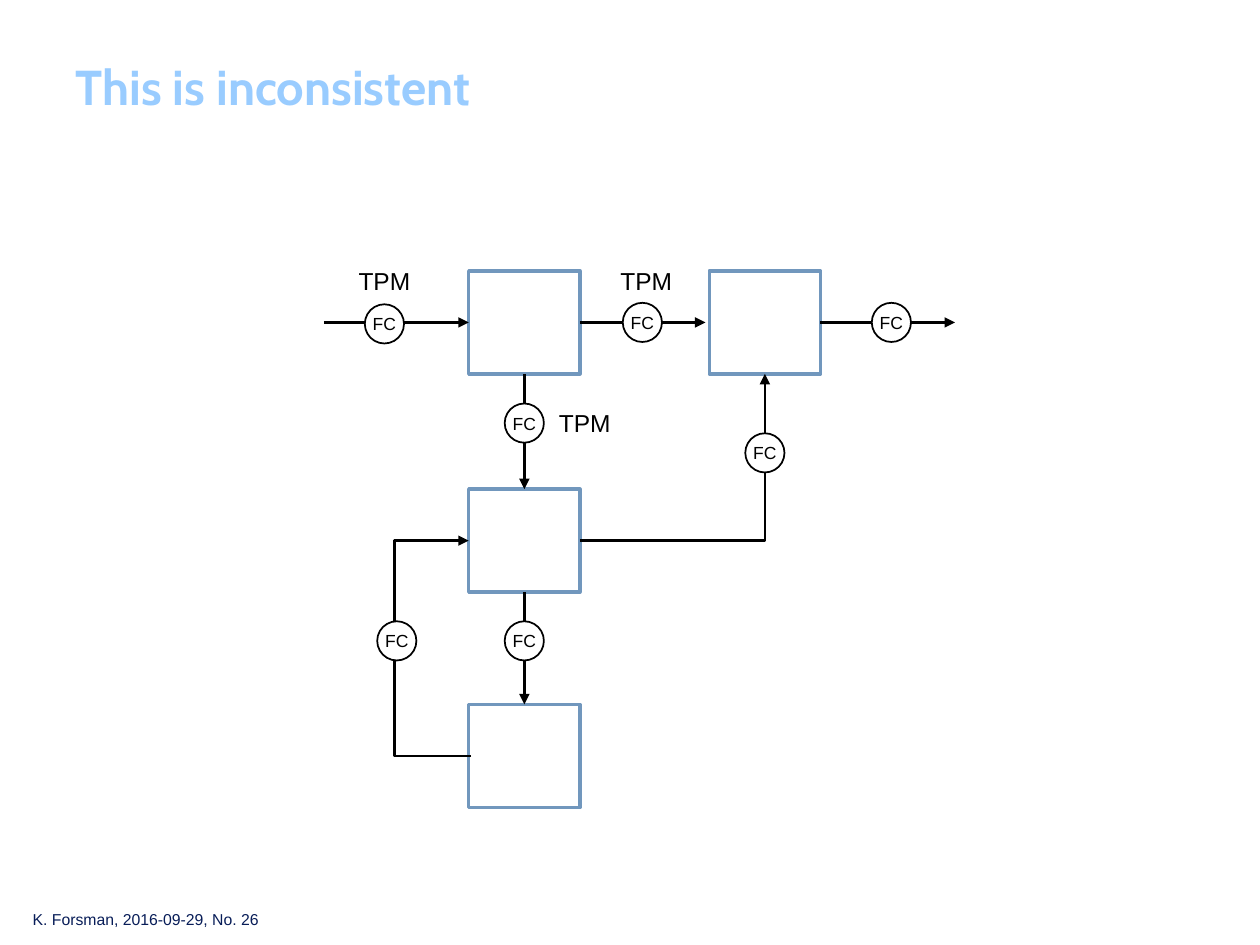
from lxml import etree
from pptx import Presentation
from pptx.dml.color import RGBColor
from pptx.enum import shapes as sh, text as tx
from pptx.oxml.ns import qn
from pptx.util import Cm, Pt

BLACK = RGBColor(0, 0, 0)
WHITE = RGBColor(255, 255, 255)
STEEL = RGBColor(0x71, 0x97, 0xBD)
SKY = RGBColor(0x99, 0xCC, 0xFF)
NAVY = RGBColor(0x08, 0x1D, 0x58)

WIDE, HIGH, RING = 2.24, 2.08, 0.79
COL1, COL2 = 10.57, 15.42
ROW1, ROW2, ROW3 = 6.5, 10.9, 15.24
LEFT1, RIGHT1 = COL1 - WIDE / 2, COL1 + WIDE / 2
HALF = HIGH / 2
LOOP = 7.95

UNITS = [(COL1, ROW1), (COL1, ROW2), (COL2, ROW1), (COL1, ROW3)]
# start, end and centre of the controller of each straight flow
FLOWS = [
    ((6.53, ROW1), (LEFT1, ROW1), (7.75, 6.53)),
    ((RIGHT1, ROW1), (14.22, ROW1), (12.95, ROW1)),
    ((COL2 + WIDE / 2, ROW1), (19.25, ROW1), (17.97, ROW1)),
    ((COL1, ROW1 + HALF), (COL1, ROW2 - HALF), (COL1, 8.53)),
    ((COL1, ROW2 + HALF), (COL1, ROW3 - HALF), (COL1, 12.92)),
]
TAGS = [(7.75, 5.66), (13.03, 5.66), (11.79, 8.53)]


def style(font, size, color, name="Arial", bold=False):
    font.size, font.name, font.bold = Pt(size), name, bold
    font.color.rgb = color


def add_node(slide, kind, spot, size, color, weight):
    """Add a white outlined shape centred on spot."""
    (x, y), (w, h) = spot, size
    node = slide.shapes.add_shape(kind, Cm(x - w / 2), Cm(y - h / 2), Cm(w), Cm(h))
    node.shadow.inherit = False
    node.fill.solid()
    node.fill.fore_color.rgb = WHITE
    node.line.color.rgb = color
    node.line.width = Pt(weight)
    return node


def add_text(slide, box, words, size, color, align, wrap):
    label = slide.shapes.add_textbox(*map(Cm, box))
    frame = label.text_frame
    frame.word_wrap = wrap
    frame.vertical_anchor = tx.MSO_ANCHOR.MIDDLE
    frame.text = words
    para = frame.paragraphs[0]
    para.alignment = align
    style(para.runs[0].font, size, color)


def add_ring(slide, spot):
    """Add a flow controller."""
    ring = add_node(slide, sh.MSO_SHAPE.OVAL, spot, (RING, RING), BLACK, 1)
    frame = ring.text_frame
    frame.word_wrap = False
    frame.vertical_anchor = tx.MSO_ANCHOR.MIDDLE
    frame.text = "FC"
    para = frame.paragraphs[0]
    para.alignment = tx.PP_ALIGN.CENTER
    style(para.runs[0].font, 10, BLACK)


def add_flow(slide, start, end, spot, kind=sh.MSO_CONNECTOR.STRAIGHT):
    """Add an arrow with a controller on it."""
    flow = slide.shapes.add_connector(kind, *map(Cm, start + end))
    flow.line.color.rgb = BLACK
    flow.line.width = Pt(1.5)
    etree.SubElement(flow.line._get_or_add_ln(), qn("a:tailEnd"), type="triangle")
    etree.SubElement(flow._element.spPr, qn("a:effectLst"))
    add_ring(slide, spot)
    return flow


def add_bends(slide):
    """Add the recycle loop and the flow up to the second column."""
    elbow = sh.MSO_CONNECTOR.ELBOW
    start, end = (LEFT1 + 0.05, ROW3), (LEFT1, ROW2)
    loop = add_flow(slide, start, end, (8, 12.92), elbow)
    geom = loop._element.spPr.find(qn("a:prstGeom"))
    ratio = (start[0] - LOOP) / (start[0] - end[0])
    etree.SubElement(geom.find(qn("a:avLst")), qn("a:gd"),
                     name="adj1", fmla=f"val {round(ratio * 100000)}")

    rise = add_flow(slide, (RIGHT1, ROW2), (COL2, ROW1 + HALF), (COL2, 9.13), elbow)
    rise._element.spPr.find(qn("a:prstGeom")).set("prst", "bentConnector2")


def add_title(slide, words):
    title = slide.shapes.title
    title.left, title.top = Cm(1.27), Cm(0.76)
    title.width, title.height = Cm(22.63), Cm(1.96)
    frame = title.text_frame
    frame.vertical_anchor = tx.MSO_ANCHOR.MIDDLE
    frame.text = words
    para = frame.paragraphs[0]
    para.alignment = tx.PP_ALIGN.LEFT
    style(para.runs[0].font, 28, SKY, "Cabin", True)


def main():
    deck = Presentation()
    deck.slide_width, deck.slide_height = Cm(25.4), Cm(19.05)
    slide = deck.slides.add_slide(deck.slide_layouts[5])
    add_title(slide, "This is inconsistent")
    add_text(slide, (0.41, 18.21, 5.16, 0.64), "K. Forsman, 2016-09-29, No. 26",
             9, NAVY, tx.PP_ALIGN.LEFT, False)
    for spot in UNITS:
        add_node(slide, sh.MSO_SHAPE.RECTANGLE, spot, (WIDE, HIGH), STEEL, 2)
    for flow in FLOWS:
        add_flow(slide, *flow)
    add_bends(slide)
    for x, y in TAGS:
        add_text(slide, (x - 0.89, y - 0.43, 1.78, 0.86), "TPM",
                 14, BLACK, tx.PP_ALIGN.CENTER, True)
    deck.save("out.pptx")


if __name__ == "__main__":
    main()
